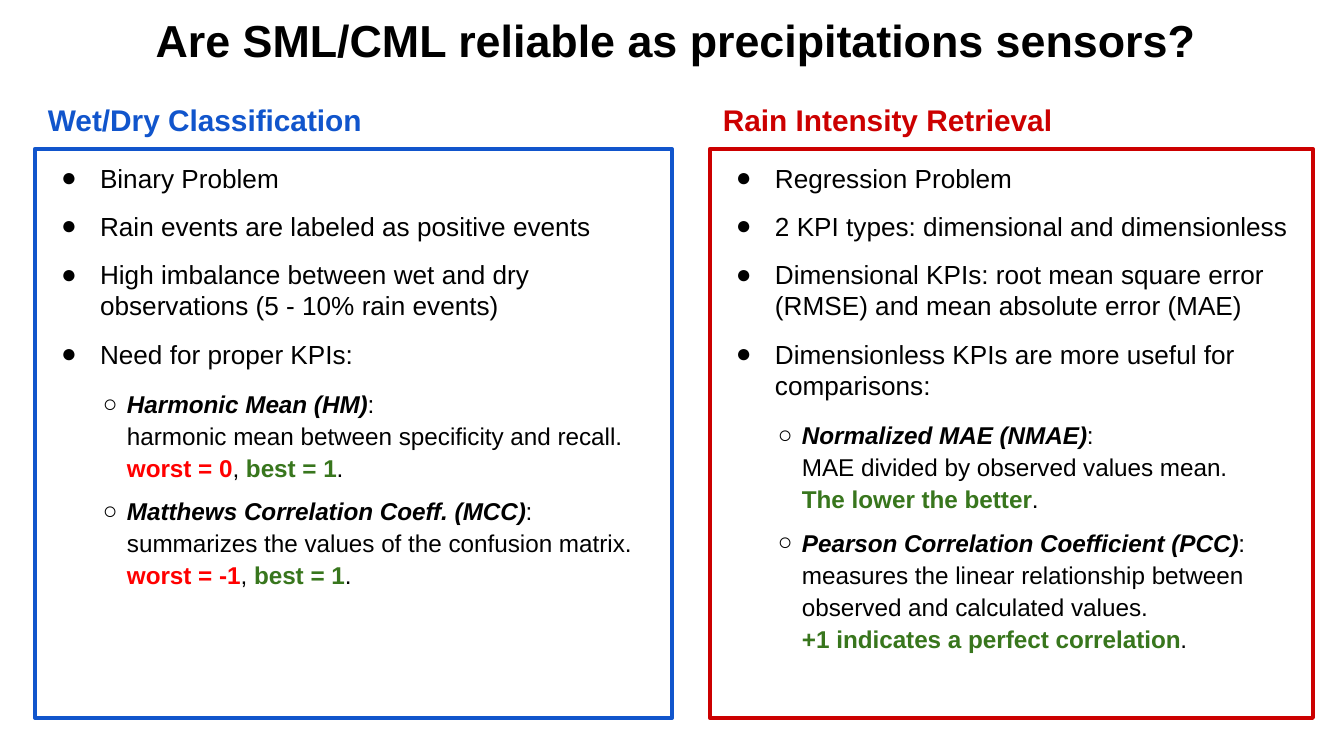
from lxml.etree import SubElement
from pptx import Presentation
from pptx.dml.color import RGBColor
from pptx.enum.shapes import MSO_SHAPE
from pptx.enum.text import MSO_ANCHOR, PP_ALIGN
from pptx.oxml.ns import qn
from pptx.util import Emu, Pt

BLACK = RGBColor(0x00, 0x00, 0x00)
WHITE = RGBColor(0xFF, 0xFF, 0xFF)
BLUE = RGBColor(0x11, 0x55, 0xCC)
CRIMSON = RGBColor(0xCC, 0x00, 0x00)
RED = RGBColor(0xFF, 0x00, 0x00)
GREEN = RGBColor(0x38, 0x76, 0x1D)

TITLE = "Are SML/CML reliable as precipitations sensors?"
STYLES = {
    "plain": {},
    "name": {"bold": True, "italic": True},
    "worst": {"bold": True, "color": RED},
    "best": {"bold": True, "color": GREEN},
}
COLUMNS = [
    {
        "heading": "Wet/Dry Classification", "color": BLUE, "fill": None, "left": 35, "width": 637,
        "points": [
            "Binary Problem",
            "Rain events are labeled as positive events",
            "High imbalance between wet and dry observations (5 - 10% rain events)",
            "Need for proper KPIs:",
        ],
        "metrics": [
            [("Harmonic Mean (HM)", "name"),
             (":\nharmonic mean between specificity and recall.\n", "plain"),
             ("worst = 0", "worst"), (", ", "plain"), ("best = 1", "best"), (".", "plain")],
            [("Matthews Correlation Coeff. (MCC)", "name"),
             (":\nsummarizes the values of the confusion matrix. ", "plain"),
             ("worst = -1", "worst"), (", ", "plain"), ("best = 1", "best"), (".", "plain")],
        ],
    },
    {
        "heading": "Rain Intensity Retrieval", "color": CRIMSON, "fill": WHITE, "left": 710, "width": 603,
        "points": [
            "Regression Problem",
            "2 KPI types: dimensional and dimensionless",
            "Dimensional KPIs: root mean square error (RMSE) and mean absolute error (MAE)",
            "Dimensionless KPIs are more useful for comparisons:",
        ],
        "metrics": [
            [("Normalized MAE (NMAE)", "name"),
             (":\nMAE divided by observed values mean.\n", "plain"),
             ("The lower the better", "best"), (".", "plain")],
            [("Pearson Correlation Coefficient (PCC)", "name"),
             (":\nmeasures the linear relationship between observed and calculated values.\n", "plain"),
             ("+1 indicates a perfect correlation", "best"), (".", "plain")],
        ],
    },
]
POINT = {"bullet": "●", "indent": 52, "hanging": 39, "level": 0}
METRIC = {"bullet": "○", "indent": 79, "hanging": 24, "level": 1}


def px(length):
    """Turn pixels into EMU."""
    return Emu(round(length * 914400 / 134.4))


def set_all(target, **values):
    """Set each named attribute of the target."""
    for name, value in values.items():
        setattr(target, name, value)


def prepare(box):
    """Give a box its wrapping, anchor and insets, and return its text frame."""
    frame = box.text_frame
    set_all(frame, word_wrap=True, vertical_anchor=MSO_ANCHOR.TOP,
            **{f"margin_{side}": px(13) for side in ("left", "right", "top", "bottom")})
    return frame


def write(para, text, size, color=BLACK, bold=False, italic=False):
    """Add text to a paragraph, with line breaks at newlines."""
    for number, line in enumerate(text.split("\n")):
        if number:
            para.add_line_break()
        if line:
            span = para.add_run()
            span.text = line
            set_all(span.font, name="Arial", size=Pt(size), bold=bold, italic=italic)
            span.font.color.rgb = color


def add_label(page, place, text, **style):
    """Add a one-line text box and return its paragraph."""
    frame = prepare(page.shapes.add_textbox(*map(px, place)))
    para = frame.paragraphs[0]
    write(para, text, bold=True, **style)
    return para


def add_bullet(para, kind, **spacing):
    """Format a paragraph as a bulleted item."""
    set_all(para, alignment=PP_ALIGN.LEFT, level=kind["level"], **spacing)
    properties = para._p.get_or_add_pPr()
    properties.set("marL", str(px(kind["indent"])))
    properties.set("indent", str(-px(kind["hanging"])))
    SubElement(SubElement(properties, qn("a:buClr")), qn("a:srgbClr"), val=str(BLACK))
    SubElement(properties, qn("a:buFont"), typeface="Arial")
    SubElement(properties, qn("a:buChar"), char=kind["bullet"])


def add_column(page, column):
    """Add a framed list with its heading."""
    place = map(px, (column["left"], 149, column["width"], 569))
    box = page.shapes.add_shape(MSO_SHAPE.RECTANGLE, *place)
    box.shadow.inherit = False
    if column["fill"] is None:
        box.fill.background()
    else:
        box.fill.solid()
        box.fill.fore_color.rgb = column["fill"]
    box.line.color.rgb = column["color"]
    box.line.width = Pt(2.25)
    frame = prepare(box)
    for number, text in enumerate(column["points"]):
        para = frame.add_paragraph() if number else frame.paragraphs[0]
        add_bullet(para, POINT, space_before=Pt(9 if number else 0))
        write(para, text, 14)
    for spans, before, after in zip(column["metrics"], (9, 6), (0, 6)):
        para = frame.add_paragraph()
        add_bullet(para, METRIC, line_spacing=1.1, space_before=Pt(before), space_after=Pt(after))
        for text, style in spans:
            write(para, text, 13, **STYLES[style])
    add_label(page, (column["left"], 89, 587, 44), column["heading"], size=16, color=column["color"])


def main():
    """Build and save the slide."""
    deck = Presentation()
    set_all(deck, slide_width=px(1344), slide_height=px(756))
    page = deck.slides.add_slide(deck.slide_layouts[6])
    add_label(page, (7, 0, 1337, 71), TITLE, size=24).alignment = PP_ALIGN.CENTER
    for column in COLUMNS:
        add_column(page, column)
    deck.save("out.pptx")


if __name__ == "__main__":
    main()
